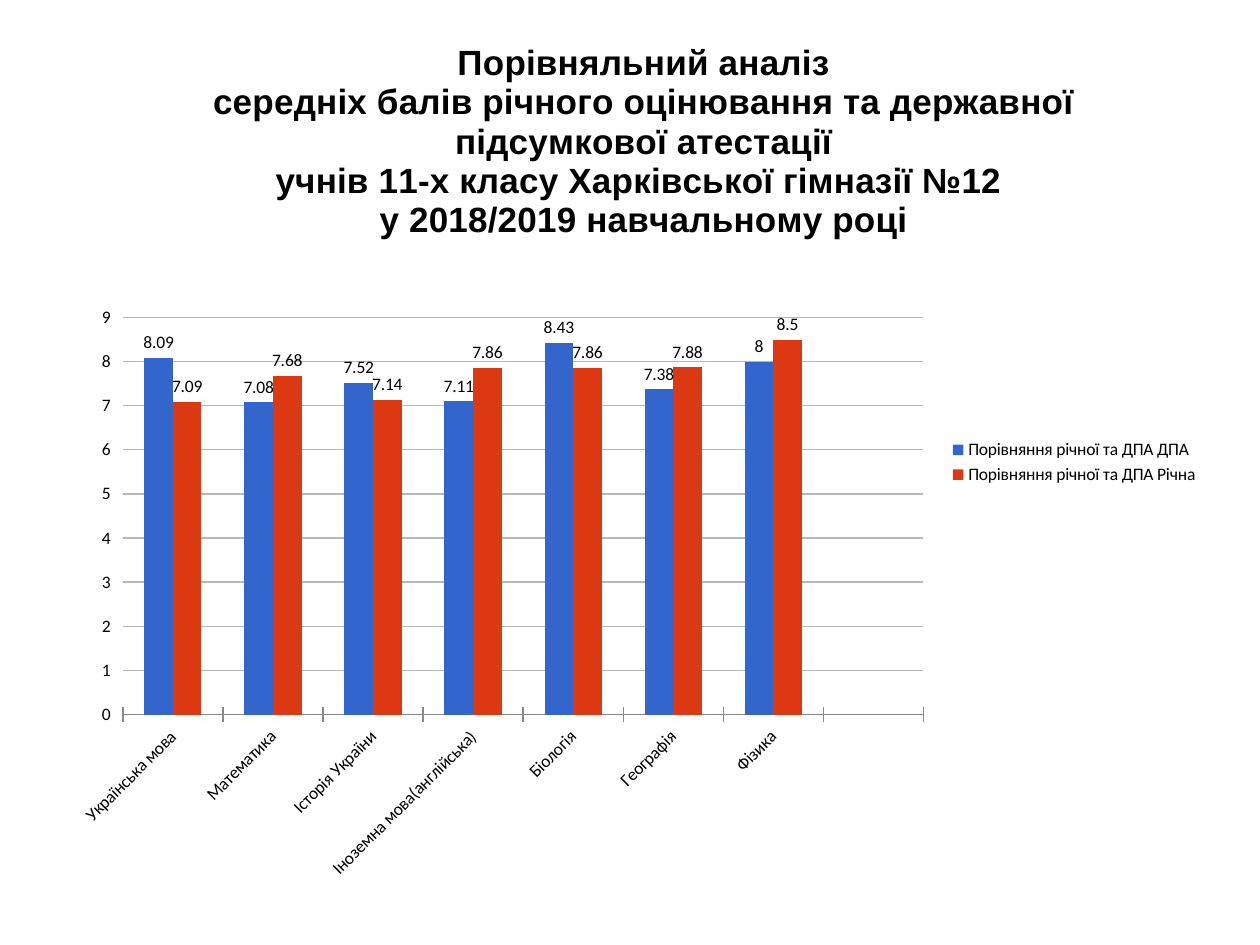
from lxml import etree
from pptx import Presentation
from pptx.chart.data import CategoryChartData
from pptx.dml.color import RGBColor
from pptx.enum.chart import (XL_CHART_TYPE, XL_LABEL_POSITION,
                             XL_LEGEND_POSITION, XL_TICK_MARK)
from pptx.util import Cm, Pt

COLUMN = XL_CHART_TYPE.COLUMN_CLUSTERED
OUTSIDE = XL_LABEL_POSITION.OUTSIDE_END
RIGHT = XL_LEGEND_POSITION.RIGHT
CROSS = XL_TICK_MARK.CROSS

# Content
TITLE = [
    "Порівняльний аналіз",
    "середніх балів річного оцінювання та державної підсумкової атестації",
    "учнів 11-х класу Харківської гімназії №12 ",
    "у 2018/2019 навчальному році",
]
# The last slot on the axis is left open
SUBJECTS = ["Українська мова", "Математика", "Історія України",
            "Іноземна мова(англійська)", "Біологія", "Географія", "Фізика", ""]
SCORES = {
    "Порівняння річної та ДПА ДПА":
        [8.09, 7.08, 7.52, 7.11, 8.43, 7.38, 8, None],
    "Порівняння річної та ДПА Річна":
        [7.09, 7.68, 7.14, 7.86, 7.86, 7.88, 8.5, None],
}
THEME = {
    "font": "Calibri", "head": "Arial", "size": Pt(10), "big": Pt(20),
    "ink": RGBColor.from_string("000000"),
    "grid": RGBColor.from_string("B7B7B7"),
    "axis": RGBColor.from_string("888888"),
    "bars": [RGBColor.from_string(c) for c in ("3366CC", "DC3912")],
}


def style(font, face, size, bold=False):
    font.name, font.size, font.bold = face, size, bold
    font.color.rgb = THEME["ink"]


def place(part, after, inner=False, **box):
    """Put a manual layout, in shares of the chart, after the given child."""
    for old in part.findall("{*}layout"):
        part.remove(old)
    ns = "{" + etree.QName(part).namespace + "}"
    layout = etree.Element(ns + "layout")
    manual = etree.SubElement(layout, ns + "manualLayout")
    rows = [("layoutTarget", "inner")] if inner else []
    rows += [("xMode", "edge"), ("yMode", "edge"), *box.items()]
    for tag, val in rows:
        etree.SubElement(manual, ns + tag).set("val", str(val))
    spot = 0 if after is None else part.index(part.find("{*}" + after)) + 1
    part.insert(spot, layout)


deck = Presentation()
deck.slide_width, deck.slide_height = Cm(25.4), Cm(19.05)
slide = deck.slides.add_slide(deck.slide_layouts[6])

# Chart
data = CategoryChartData()
data.categories = SUBJECTS
for name, vals in SCORES.items():
    data.add_series(name, vals)
chart = slide.shapes.add_chart(
    COLUMN, Cm(1.2), Cm(0.58), Cm(23.22), Cm(17.48), data).chart
style(chart.font, THEME["font"], THEME["size"])

# Title
frame = chart.chart_title.text_frame
for i, line in enumerate(TITLE):
    para = frame.paragraphs[0] if i == 0 else frame.add_paragraph()
    para.text = line
    style(para.font, THEME["head"], THEME["big"], True)
    style(para.runs[0].font, THEME["head"], THEME["big"], True)
chart.chart_title.include_in_layout = False
place(chart.chart_title._element, "tx", x=0.13, y=0.01)

# Bars and their values
plot = chart.plots[0]
plot.gap_width, plot.overlap = 150, 0
plot.vary_by_categories = False
for bar, color in zip(plot.series, THEME["bars"]):
    bar.format.fill.solid()
    bar.format.fill.fore_color.rgb = color
    bar.invert_if_negative = False
    tags = bar.data_labels
    tags.show_value = True
    tags.position = OUTSIDE
    style(tags.font, THEME["font"], THEME["size"])
place(plot._element.getparent(), None, True, x=0.055, y=0.333, w=0.695, h=0.458)

# Axes
cat, val = chart.category_axis, chart.value_axis
for axis in (cat, val):
    axis.major_tick_mark = CROSS
    style(axis.tick_labels.font, THEME["font"], THEME["size"])
cat.format.line.color.rgb = THEME["axis"]
cat._element.find("{*}txPr/{*}bodyPr").set("rot", str(-45 * 60000))
val.minimum_scale, val.maximum_scale, val.major_unit = 0, 9, 1
val.format.line.fill.background()
grid = val.major_gridlines.format.line
grid.color.rgb, grid.width = THEME["grid"], Pt(0.75)

# Legend
chart.has_legend = True
chart.legend.position = RIGHT
chart.legend.include_in_layout = False
style(chart.legend.font, THEME["font"], THEME["size"])

deck.save("out.pptx")
